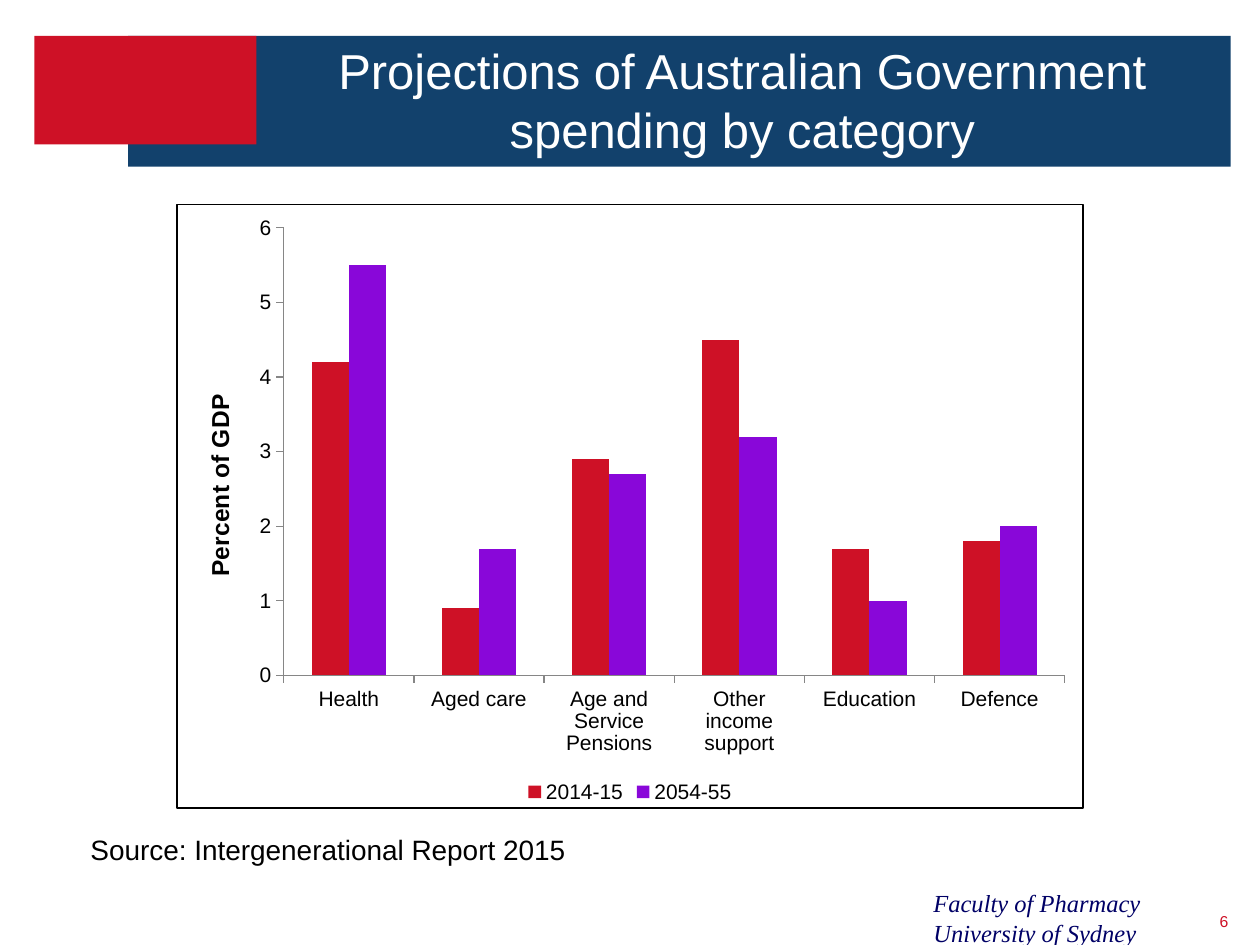
import pptx
import pptx.chart.data
import pptx.dml.color
import pptx.enum.chart
import pptx.enum.shapes
import pptx.enum.text
import pptx.util
from lxml import etree

Pt = pptx.util.Pt
ALIGN = pptx.enum.text.PP_ALIGN
ANCHOR = pptx.enum.text.MSO_ANCHOR
CHART = pptx.enum.chart

NAVY, RED, PURPLE = "12416C", "CE1126", "8907D9"
BLACK, WHITE, GREY = "000000", "FFFFFF", "868686"

TITLE = "Projections of Australian Government spending by category"
# left, top, width, height, colour
BANDS = [(73.2, 20.5, 630, 74.7, NAVY), (19.7, 20.5, 126.8, 62, RED)]
TEXTS = [
    dict(text="Faculty of Pharmacy\vUniversity of Sydney", at=(526.3, 504, 167.8, 41),
         color="000066", font=dict(name="Times New Roman", size=Pt(14), italic=True)),
    dict(text="6", at=(682.6, 518.4, 19.4, 16.6), color=RED,
         font=dict(name="Arial", size=Pt(9)), align=ALIGN.RIGHT,
         frame=dict(vertical_anchor=ANCHOR.MIDDLE, margin_left=0, margin_right=0,
                    margin_top=0, margin_bottom=0)),
    dict(text="Source: Intergenerational Report 2015", at=(44.6, 472.3, 289.4, 26.6),
         color=BLACK, font=dict(name="Arial", size=Pt(16)), frame=dict(word_wrap=False)),
]
CHART_AT = (100.8, 116.6, 518.4, 345.6)
CATEGORIES = ["Health", "Aged care", "Age and Service Pensions",
              "Other income support", "Education", "Defence"]
SERIES = [("2014-15", [4.2, 0.9, 2.9, 4.5, 1.7, 1.8], RED),
          ("2054-55", [5.5, 1.7, 2.7, 3.2, 1, 2], PURPLE)]


def rgb(value):
    return pptx.dml.color.RGBColor.from_string(value)


def assign(target, values):
    for name, value in values.items():
        setattr(target, name, value)


def place(at):
    return [Pt(length) for length in at]


def write(box, text, color, font, align=ALIGN.LEFT, frame=None):
    """Fill a box with one formatted paragraph."""
    assign(box.text_frame, {"word_wrap": True, **(frame or {})})
    para = box.text_frame.paragraphs[0]
    para.text = text
    para.alignment = align
    for span in para.runs:
        assign(span.font, font)
        span.font.color.rgb = rgb(color)


def add_border(chart, color, points):
    """Outline the whole chart area."""
    border = etree.fromstring(
        '<c:spPr xmlns:c="http://schemas.openxmlformats.org/drawingml/2006/chart"'
        ' xmlns:a="http://schemas.openxmlformats.org/drawingml/2006/main"><a:noFill/>'
        f'<a:ln w="{Pt(points)}"><a:solidFill><a:srgbClr val="{color}"/></a:solidFill></a:ln>'
        '</c:spPr>')
    chart.element.chart.addnext(border)


def add_spending_chart(page):
    data = pptx.chart.data.CategoryChartData()
    data.categories = CATEGORIES
    for name, values, _ in SERIES:
        data.add_series(name, values)
    chart = page.shapes.add_chart(CHART.XL_CHART_TYPE.COLUMN_CLUSTERED,
                                  *place(CHART_AT), data).chart
    assign(chart.font, dict(name="Arial", size=Pt(12)))
    chart.font.color.rgb = rgb(BLACK)
    assign(chart, dict(has_title=False, has_legend=True))
    assign(chart.legend, dict(position=CHART.XL_LEGEND_POSITION.BOTTOM,
                              include_in_layout=False))
    assign(chart.plots[0], dict(gap_width=150, overlap=0, vary_by_categories=False))
    for series, (_, _, color) in zip(chart.plots[0].series, SERIES):
        series.format.fill.solid()
        series.format.fill.fore_color.rgb = rgb(color)
    for axis in (chart.category_axis, chart.value_axis):
        assign(axis, dict(has_major_gridlines=False,
                          major_tick_mark=CHART.XL_TICK_MARK.OUTSIDE,
                          minor_tick_mark=CHART.XL_TICK_MARK.NONE))
        axis.format.line.color.rgb = rgb(GREY)
        axis.format.line.width = Pt(0.75)
    assign(chart.value_axis, dict(minimum_scale=0, maximum_scale=6, major_unit=1))
    write(chart.value_axis.axis_title, "Percent of GDP", BLACK,
          dict(name="Arial", size=Pt(14), bold=True), ALIGN.CENTER)
    add_border(chart, BLACK, 0.75)


def main():
    deck = pptx.Presentation()
    assign(deck, dict(slide_width=Pt(720), slide_height=Pt(540)))
    page = deck.slides.add_slide(deck.slide_layouts[5])

    for *at, color in BANDS:
        band = page.shapes.add_shape(pptx.enum.shapes.MSO_SHAPE.RECTANGLE, *place(at))
        band.shadow.inherit = False
        band.fill.solid()
        band.fill.fore_color.rgb = rgb(color)
        band.line.fill.background()

    title = page.shapes.title
    page.shapes.element.append(title.element)  # in front of the bands
    assign(title, dict(zip(("left", "top", "width", "height"),
                           place((146.2, 44.6, 555.8, 49.7)))))
    write(title, TITLE, WHITE, dict(name="Arial", size=Pt(28)), ALIGN.CENTER,
          dict(vertical_anchor=ANCHOR.BOTTOM, auto_size=pptx.enum.text.MSO_AUTO_SIZE.NONE))

    for entry in TEXTS:
        values = dict(entry)
        write(page.shapes.add_textbox(*place(values.pop("at"))), **values)
    add_spending_chart(page)
    deck.save("out.pptx")


if __name__ == "__main__":
    main()
